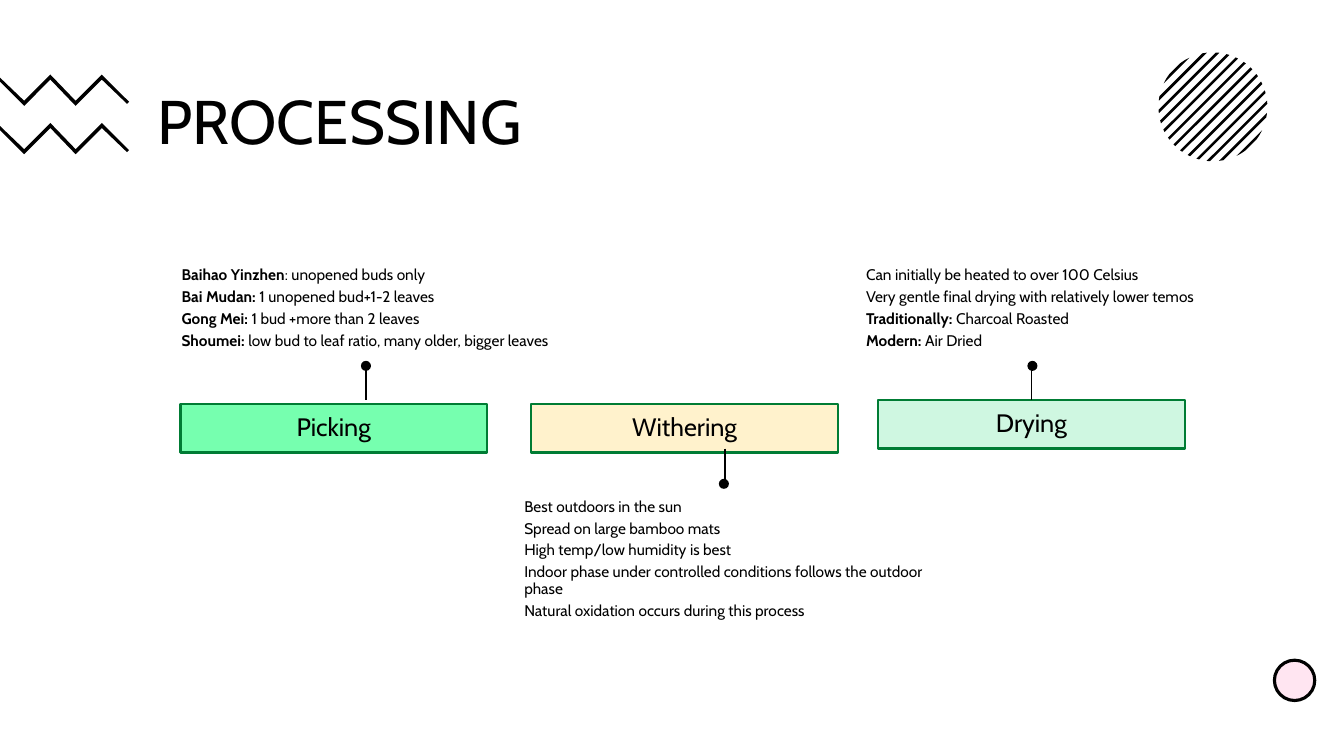
import math
import pptx
import pptx.util
import pptx.dml.color
import pptx.enum.shapes
import pptx.enum.text
import pptx.oxml.ns
import lxml.etree

Inches = pptx.util.Inches
Pt = pptx.util.Pt
SHAPE = pptx.enum.shapes.MSO_SHAPE
ALIGN = pptx.enum.text.PP_ALIGN
ANCHOR = pptx.enum.text.MSO_ANCHOR
FONT = "Cabin"
BLACK = "000000"
GREEN = "007C34"


def color(target, value):
    target.rgb = pptx.dml.color.RGBColor.from_string(value)


def fill(sp, value, opacity=100):
    sp.shadow.inherit = False
    sp.fill.solid()
    color(sp.fill.fore_color, value)
    if opacity < 100:
        clr = sp.fill._xPr.find(".//" + pptx.oxml.ns.qn("a:srgbClr"))
        lxml.etree.SubElement(clr, pptx.oxml.ns.qn("a:alpha"), val=str(opacity * 1000))


def outline(sp, value, width):
    color(sp.line.color, value)
    sp.line.width = Pt(width)


def style(p, size):
    p.line_spacing = 0.9
    p.font.name = FONT
    p.font.size = Pt(size)
    color(p.font.color, BLACK)


def insets(tf, x, y):
    tf.margin_left = tf.margin_right = Inches(x)
    tf.margin_top = tf.margin_bottom = Inches(y)
    tf.word_wrap = True


def add_polygon(s, points):
    pts = [(Inches(x), Inches(y)) for x, y in points]
    builder = s.shapes.build_freeform(*pts[0])
    builder.add_line_segments(pts[1:], close=True)
    sp = builder.convert_to_shape()
    fill(sp, BLACK)
    sp.line.fill.background()


def add_striped_circle(s, cx, cy, radius, count, step, thickness):
    for i in range(count):
        middle = (i - count // 2) * step
        edge = []
        for j in range(7):
            d = middle + thickness * (j / 6 - 0.5)
            d = max(-radius, min(radius, d))
            edge.append((d, math.sqrt(radius ** 2 - d ** 2)))
        ring = edge + [(d, -h) for d, h in reversed(edge)]
        add_polygon(s, [(cx + (d + h) / math.sqrt(2), cy + (d - h) / math.sqrt(2))
                        for d, h in ring])


def add_zigzag(s, top):
    upper = [(0, 0.03), (0.24, 0.26), (0.5, 0), (0.75, 0.26), (1.01, 0), (1.28, 0.27)]
    lower = [(1.26, 0.29), (1.01, 0.05), (0.75, 0.31), (0.5, 0.05), (0.24, 0.31), (0, 0.07)]
    add_polygon(s, [(x, top + y) for x, y in upper + lower])


def add_ellipse(s, x, y, size):
    return s.shapes.add_shape(SHAPE.OVAL, Inches(x), Inches(y), Inches(size), Inches(size))


def add_title(s, text):
    sp = s.shapes.title
    sp.left, sp.top, sp.width, sp.height = (Inches(v) for v in (1.46, 0.62, 10.66, 1.23))
    tf = sp.text_frame
    tf.text = text
    tf.auto_size = pptx.enum.text.MSO_AUTO_SIZE.NONE
    tf.vertical_anchor = ANCHOR.MIDDLE
    tf.paragraphs[0].alignment = ALIGN.LEFT
    style(tf.paragraphs[0], 44)


def add_step(s, text, x, y, value, opacity=100):
    sp = s.shapes.add_shape(SHAPE.RECTANGLE, Inches(x), Inches(y), Inches(3.04), Inches(0.48))
    fill(sp, value, opacity)
    outline(sp, GREEN, 1.5)
    tf = sp.text_frame
    insets(tf, 0.05, 0)
    tf.vertical_anchor = ANCHOR.MIDDLE
    p = tf.paragraphs[0]
    p.text = text
    p.alignment = ALIGN.CENTER
    style(p, 18)


def add_details(s, lines, x, y, width, anchor, indent):
    tf = s.shapes.add_textbox(Inches(x), Inches(y), Inches(width), Inches(1.67)).text_frame
    insets(tf, 0.09, 0.03)
    tf.vertical_anchor = anchor
    for i, (lead, rest) in enumerate(lines):
        p = tf.add_paragraph() if i else tf.paragraphs[0]
        p._p.get_or_add_pPr().set("marL", str(Inches(indent)))
        style(p, 11)
        p.space_after = Pt(3.75)
        if lead:
            r = p.add_run()
            r.text = lead
            r.font.bold = True
        p.add_run().text = rest


def add_pin(s, x, top, dot_x, dot_y):
    line = s.shapes.add_connector(pptx.enum.shapes.MSO_CONNECTOR.STRAIGHT, Inches(x),
                                  Inches(top), Inches(x), Inches(top + 0.38))
    outline(line, BLACK, 1)
    lxml.etree.SubElement(line._element.spPr, pptx.oxml.ns.qn("a:effectLst"))
    dot = add_ellipse(s, dot_x, dot_y, 0.1)
    fill(dot, BLACK)
    dot.line.fill.background()


def main():
    prs = pptx.Presentation()
    prs.slide_width, prs.slide_height = Inches(13.33), Inches(7.5)
    s = prs.slides.add_slide(prs.slide_layouts[5])

    add_striped_circle(s, 12.03, 1.06, 0.54, 13, 0.087, 0.026)
    for top in (0.74, 1.22):
        add_zigzag(s, top)
    circle = add_ellipse(s, 12.64, 6.55, 0.4)
    fill(circle, "FF80BD", 20)
    outline(circle, BLACK, 2.25)
    add_title(s, "PROCESSING")

    add_step(s, "Picking", 1.79, 4.01, "76FFAF")
    add_details(s, [
        ("Baihao Yinzhen", ": unopened buds only"),
        ("Bai Mudan: ", "1 unopened bud+1-2 leaves"),
        ("Gong Mei: ", "1 bud +more than 2 leaves"),
        ("Shoumei: ", "low bud to leaf ratio, many older, bigger leaves"),
    ], 0.57, 1.83, 6.11, ANCHOR.BOTTOM, 1.14)
    add_pin(s, 3.63, 3.59, 3.58, 3.58)

    add_step(s, "Withering", 5.27, 4.01, "FFC000", 20)
    add_details(s, [
        ("", "Best outdoors in the sun"),
        ("", "Spread on large bamboo mats"),
        ("", "High temp/low humidity is best"),
        ("", "Indoor phase under controlled conditions follows the outdoor phase"),
        ("", "Natural oxidation occurs during this process"),
    ], 5.01, 4.92, 4.36, ANCHOR.TOP, 0.1)
    add_pin(s, 7.19, 4.45, 7.13, 4.75)

    add_step(s, "Drying", 8.71, 3.97, "CFF7E1")
    add_details(s, [
        ("", "Can initially be heated to over 100 Celsius"),
        ("", "Very gentle final drying with relatively lower temos"),
        ("Traditionally: ", "Charcoal Roasted"),
        ("Modern: ", "Air Dried"),
    ], 8.4, 1.83, 3.66, ANCHOR.BOTTOM, 0.1)
    add_pin(s, 10.23, 3.59, 10.19, 3.58)

    prs.save("out.pptx")


if __name__ == "__main__":
    main()
